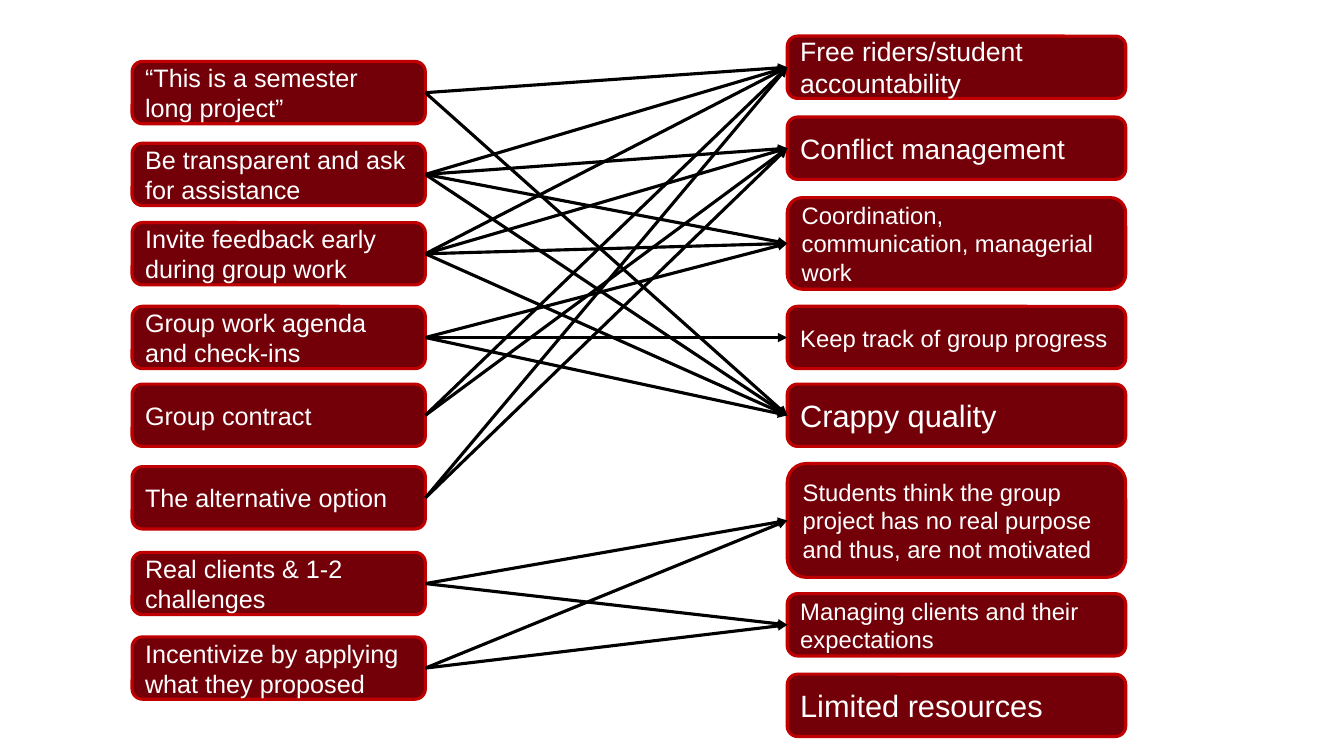
from lxml.etree import SubElement
from pptx import Presentation
from pptx.dml.color import RGBColor
from pptx.enum.shapes import MSO_CONNECTOR, MSO_SHAPE
from pptx.enum.text import MSO_ANCHOR, PP_ALIGN
from pptx.oxml.ns import qn
from pptx.util import Cm, Pt

COLORS = {"fill": "730009", "edge": "C00000", "text": "FFFFFF", "arrow": "000000"}
ROW = 1.57  # usual box height


def color(name):
    return RGBColor.from_string(COLORS[name])


def add_box(left, top, width, height, text, size):
    box = slide.shapes.add_shape(MSO_SHAPE.ROUNDED_RECTANGLE,
                                 Cm(left), Cm(top), Cm(width), Cm(height))
    box.shadow.inherit = False
    box.fill.solid()
    box.fill.fore_color.rgb = color("fill")
    box.line.color.rgb = color("edge")
    box.line.width = Pt(2.25)
    frame = box.text_frame
    frame.word_wrap = True
    frame.vertical_anchor = MSO_ANCHOR.MIDDLE
    frame.text = text
    para = frame.paragraphs[0]
    para.alignment = PP_ALIGN.LEFT
    font = para.runs[0].font
    font.name = "Arial"
    font.size = Pt(size)
    font.color.rgb = color("text")
    return box


deck = Presentation()
deck.slide_width, deck.slide_height = Cm(33.87), Cm(19.05)
slide = deck.slides.add_slide(deck.slide_layouts[6])

# Left column: top, text, rows of the right column it points to
actions = [
    (1.55, "“This is a semester long project”", [0, 4]),
    (3.61, "Be transparent and ask for assistance", [0, 1, 2, 4]),
    (5.61, "Invite feedback early during group work", [0, 1, 2, 4]),
    (7.72, "Group work agenda and check-ins", [2, 3, 4]),
    (9.68, "Group contract", [0, 1]),
    (11.76, "The alternative option", [0, 1]),
    (13.92, "Real clients & 1-2 challenges", [5, 6]),
    (16.05, "Incentivize by applying what they proposed", [5, 6]),
]

# Right column: top, height, text, font size
issues = [
    (0.91, ROW, "Free riders/student accountability", 19),
    (2.95, ROW, "Conflict management", 20),
    (4.98, 2.31, "Coordination, communication, managerial work", 17),
    (7.72, ROW, "Keep track of group progress", 17),
    (9.68, ROW, "Crappy quality", 22),
    (11.68, 2.87, "Students think the group project has no real purpose "
                  "and thus, are not motivated", 17),
    (14.96, ROW, "Managing clients and their expectations", 17),
    (16.99, ROW, "Limited resources", 22),
]

# Boxes
starts = [add_box(3.33, top, 7.39, ROW, text, 18) for top, text, _ in actions]
ends = [add_box(19.84, top, 8.53, height, text, size)
        for top, height, text, size in issues]

# Arrows from each action to its issues
for start, (_, _, rows) in zip(starts, actions):
    for row in rows:
        arrow = slide.shapes.add_connector(MSO_CONNECTOR.STRAIGHT, 0, 0, 0, 0)
        arrow.begin_connect(start, 3)
        arrow.end_connect(ends[row], 1)
        arrow.line.color.rgb = color("arrow")
        arrow.line.width = Pt(2.25)
        SubElement(arrow.line._get_or_add_ln(), qn("a:tailEnd"), type="triangle")
        SubElement(arrow._element.spPr, qn("a:effectLst"))

deck.save("out.pptx")
